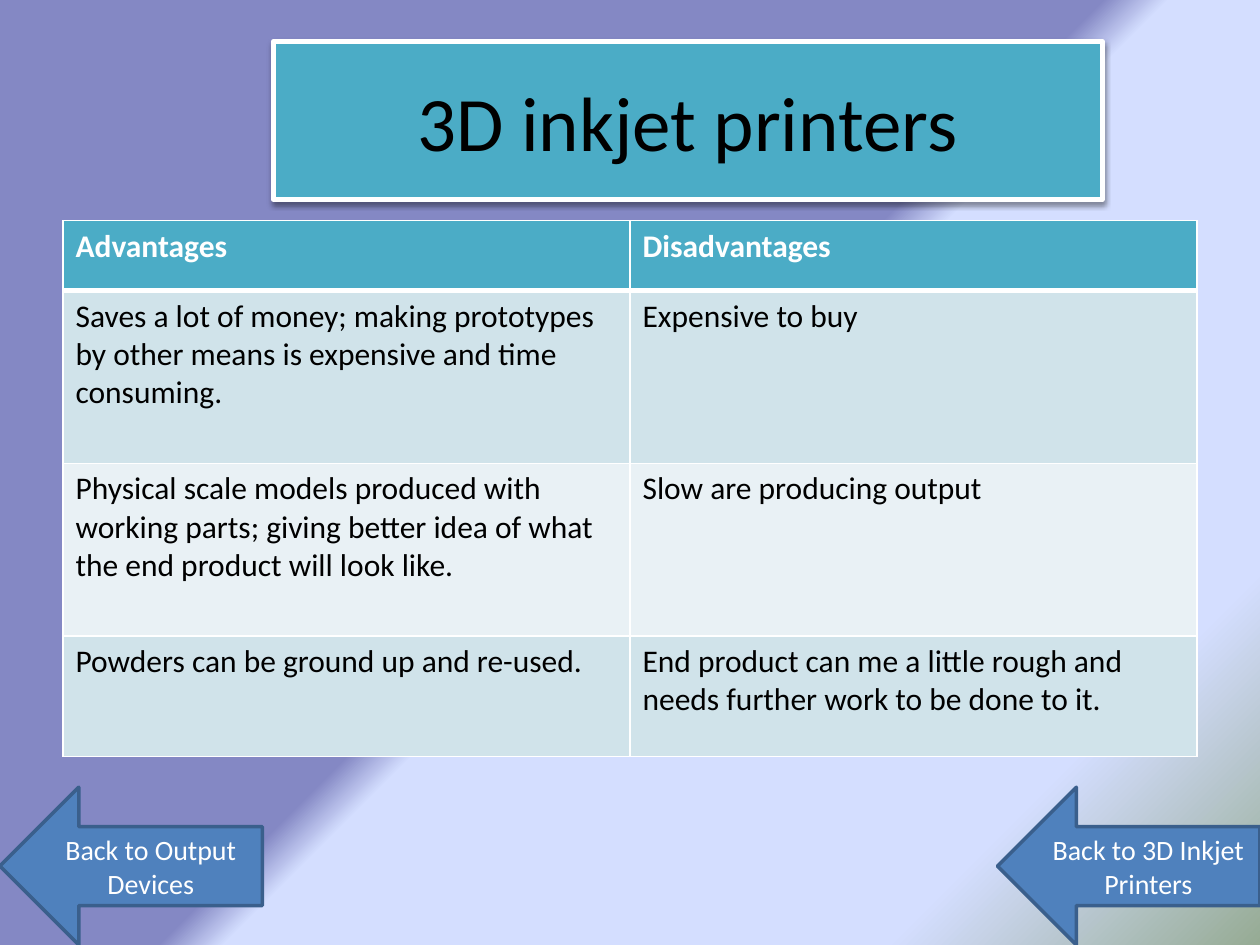
from typing import NamedTuple

from lxml import etree
from pptx import Presentation
from pptx.dml.color import RGBColor
from pptx.enum.shapes import MSO_SHAPE
from pptx.enum.text import MSO_ANCHOR, PP_ALIGN
from pptx.oxml.ns import qn
from pptx.util import Cm, Pt

RECT = MSO_SHAPE.RECTANGLE
ARROW = MSO_SHAPE.RIGHT_ARROW
MIDDLE = MSO_ANCHOR.MIDDLE
CENTER = PP_ALIGN.CENTER
FONT = "Calibri"
WHITE, BLACK, TEAL = "FFFFFF", "000000", "4BACC6"
BANDS = ("D0E3EA", "E9F1F5")
WIDE, HIGH = 25.4, 19.05
SIDE, TALL = 5.29, 3.18


class Box(NamedTuple):
    kind: int
    left: float
    top: float
    width: float
    height: float
    fill: str
    edge: str
    line: float
    text: str
    size: int
    ink: str


class Row(NamedTuple):
    height: float
    pros: str
    cons: str


class Stop(NamedTuple):
    pos: int
    tone: str
    alpha: int = 100


STOPS = (Stop(50, "8488C4", 67), Stop(53, "D4DEFF"),
         Stop(83, "D4DEFF"), Stop(100, "96AB94"))
TITLE = Box(RECT, 5.51, 0.84, 16.71, TALL, TEAL, WHITE, 3,
            "3D inkjet printers", 44, BLACK)
LINKS = [
    Box(ARROW, left, HIGH - TALL, SIDE, TALL, "4F81BD", "3A5F8C", 2, text, 16, WHITE)
    for left, text in ((0, "Back to Output Devices"),
                       (WIDE - SIDE, "Back to 3D Inkjet Printers"))
]
ROWS = (
    Row(1.41, "Advantages", "Disadvantages"),
    Row(3.48, "Saves a lot of money; making prototypes by other means is "
        "expensive and time consuming.", "Expensive to buy"),
    Row(3.48, "Physical scale models produced with working parts; giving better "
        "idea of what the end product will look like.", "Slow are producing output"),
    Row(2.43, "Powders can be ground up and re-used.",
        "End product can me a little rough and needs further work to be done to it."),
)


def shade(hue: str) -> RGBColor:
    return RGBColor.from_string(hue)


def node(parent, tag: str, **attrs):
    return etree.SubElement(parent, qn(tag), {k: str(v) for k, v in attrs.items()})


def tint(parent, hue: str, alpha: int = 100) -> None:
    color = node(parent, "a:srgbClr", val=hue)
    if alpha < 100:
        node(color, "a:alpha", val=alpha * 1000)


def write(para, text: str, size: int, ink: str, bold: bool = False) -> None:
    run = para.add_run()
    run.text = text
    font = run.font
    font.name, font.size, font.bold = FONT, Pt(size), bold
    font.color.rgb = shade(ink)


def paint(slide) -> None:
    fill = slide.background.fill
    fill.gradient()
    grad = slide.background._cSld.find(".//" + qn("a:gradFill"))
    for child in list(grad):
        grad.remove(child)
    group = node(grad, "a:gsLst")
    for stop in STOPS:
        tint(node(group, "a:gs", pos=stop.pos * 1000), stop.tone, stop.alpha)
    node(grad, "a:lin", ang=45 * 60000, scaled=0)


def draw(slide, box: Box):
    shape = slide.shapes.add_shape(box.kind, Cm(box.left), Cm(box.top),
                                   Cm(box.width), Cm(box.height))
    shape.shadow.inherit = False
    shape.fill.solid()
    shape.fill.fore_color.rgb = shade(box.fill)
    shape.line.color.rgb = shade(box.edge)
    shape.line.width = Pt(box.line)
    frame = shape.text_frame
    frame.word_wrap = True
    frame.vertical_anchor = MIDDLE
    para = frame.paragraphs[0]
    para.alignment = CENTER
    write(para, box.text, box.size, box.ink)
    return shape


def cast(shape) -> None:
    glow = shape._element.spPr.find(qn("a:effectLst"))
    drop = node(glow, "a:outerShdw", blurRad=Pt(3.1), dist=Pt(1.6),
                dir=90 * 60000, rotWithShape=0)
    tint(drop, BLACK, 38)


def frame_cell(cell, top: int, base: int) -> None:
    props = cell._tc.get_or_add_tcPr()
    sides = (("a:lnL", 1), ("a:lnR", 1), ("a:lnT", top), ("a:lnB", base))
    for i, (tag, width) in enumerate(sides):
        line = node(props, tag, w=Pt(width))
        tint(node(line, "a:solidFill"), WHITE)
        props.insert(i, line)


def fill_table(slide) -> None:
    high = sum(row.height for row in ROWS)
    table = slide.shapes.add_table(len(ROWS), 2, Cm(1.27), Cm(4.45),
                                   Cm(22.86), Cm(high)).table
    table.horz_banding = False
    for i, row in enumerate(ROWS):
        head = i == 0
        table.rows[i].height = Cm(row.height)
        for j, text in enumerate((row.pros, row.cons)):
            cell = table.cell(i, j)
            cell.fill.solid()
            cell.fill.fore_color.rgb = shade(TEAL if head else BANDS[(i - 1) % 2])
            frame_cell(cell, 3 if i == 1 else 1, 3 if head else 1)
            write(cell.text_frame.paragraphs[0], text, 18,
                  WHITE if head else BLACK, head)


def main() -> None:
    deck = Presentation()
    deck.slide_width, deck.slide_height = Cm(WIDE), Cm(HIGH)
    slide = deck.slides.add_slide(deck.slide_layouts[6])
    paint(slide)
    cast(draw(slide, TITLE))
    fill_table(slide)
    for link in LINKS:
        draw(slide, link)._element.spPr.xfrm.set("flipH", "1")
    deck.save("out.pptx")


if __name__ == "__main__":
    main()
